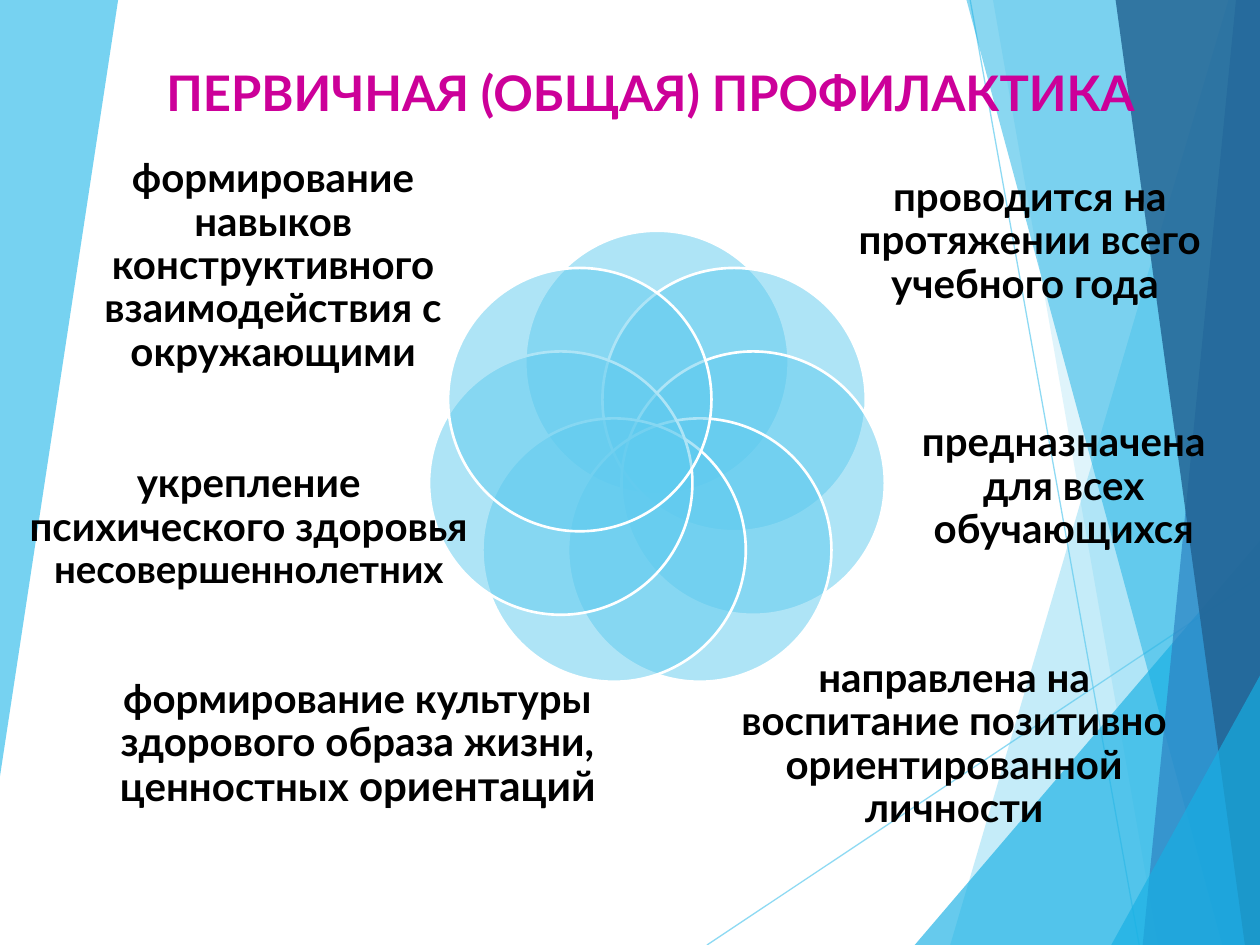
from math import cos, pi, sin

from lxml.etree import SubElement
from pptx import Presentation
from pptx.dml.color import RGBColor
from pptx.enum.shapes import MSO_CONNECTOR, MSO_SHAPE
from pptx.enum.text import MSO_ANCHOR, MSO_AUTO_SIZE, PP_ALIGN
from pptx.oxml.ns import qn
from pptx.util import Pt

THEME = {
    "font": "Lato", "title": "CC0099", "text": "000000", "outline": "FFFFFF",
    "sky": "5FCBEF", "azure": "17B0E4", "blue": "2E83C3", "navy": "226292",
    "title_size": 28, "size": 23, "large": 24, "small": 22,
}

W, H = 720, 540
RAYS = [((404, H), (W, 329.5)), ((554.4, 0), (651, H))]
# Colour, opacity in percent, corners
PANELS = [
    ("sky", 36, [(702, 0), (543, H), (W, H), (W, 0)]),
    ("sky", 20, [(567.4, 0), (661.7, H), (W, H), (W, 0)]),
    ("azure", 66, [(522.7, H), (W, 309), (W, H)]),
    ("azure", 50, [(552.3, 0), (698.4, H), (W, H), (W, 0)]),
    ("blue", 70, [(706.3, 0), (653, H), (W, H), (W, 0)]),
    ("navy", 82, [(637.5, 0), (711.4, H), (W, H), (W, 0)]),
    ("azure", 66, [(635, H), (W, 386), (W, H)]),
    ("sky", 85, [(0, 0), (67.5, 0), (0, 443.5)]),
]

TITLE = ((55.4, 20.9, 639.4, 67.7),
         [("ПЕРВИЧНАЯ (ОБЩАЯ) ПРОФИЛАКТИКА ", "title_size")])
# Clockwise from the upper right: box, runs
LABELS = [
    ((483.1, 100.1, 211, 76.3),
     [("проводится на протяжении всего учебного года ", "size")]),
    ((522.7, 236.2, 170.6, 84.2),
     [("предназначена для всех обучающихся", "size")]),
    ((409.7, 375.8, 271.4, 99.4),
     [("направлена на воспитание позитивно ориентированной личности", "size")]),
    ((61.9, 382.3, 285.1, 86.4),
     [("формирование культуры здорового образа жизни, ценностных ", "size"),
      ("ориентаций", "large")]),
    ((10.8, 236.2, 262.8, 130.3),
     [("укрепление психического здоровья ", "size"),
      ("несовершеннолетних", "small")]),
    ((55.4, 88.6, 201.6, 127.4),
     [("формирование навыков конструктивного взаимодействия с окружающими",
       "size")]),
]
PETALS, CENTRE, ORBIT, DIAMETER = 7, (375.4, 263.5), 56.4, 150.5


def color(name):
    return RGBColor.from_string(THEME[name])


def set_opacity(fill_owner, percent):
    clr = next(fill_owner.iter(qn("a:srgbClr")))
    SubElement(clr, qn("a:alpha"), val=str(percent * 1000))


def paint(sp, name, percent):
    sp.shadow.inherit = False
    sp.fill.solid()
    sp.fill.fore_color.rgb = color(name)
    set_opacity(sp._element.spPr, percent)


def add_ray(shapes, start, end):
    ray = shapes.add_connector(MSO_CONNECTOR.STRAIGHT, *map(Pt, start + end))
    ray.line.color.rgb = color("sky")
    ray.line.width = Pt(0.75)
    set_opacity(ray._element.spPr, 70)
    SubElement(ray._element.spPr, qn("a:effectLst"))


def add_panel(shapes, name, percent, corners):
    first, *rest = [(Pt(x), Pt(y)) for x, y in corners]
    builder = shapes.build_freeform(*first)
    builder.add_line_segments(rest, close=True)
    panel = builder.convert_to_shape()
    paint(panel, name, percent)
    panel.line.fill.background()


def add_petal(shapes, index):
    angle = 2 * pi * index / PETALS
    x = CENTRE[0] + ORBIT * sin(angle) - DIAMETER / 2
    y = CENTRE[1] - ORBIT * cos(angle) - DIAMETER / 2
    petal = shapes.add_shape(MSO_SHAPE.OVAL, Pt(x), Pt(y), Pt(DIAMETER), Pt(DIAMETER))
    paint(petal, "sky", 50)
    petal.line.color.rgb = color("outline")
    petal.line.width = Pt(1.5)


def write(sp, runs, ink):
    tf = sp.text_frame
    tf.word_wrap = True
    tf.auto_size = MSO_AUTO_SIZE.NONE
    tf.vertical_anchor = MSO_ANCHOR.MIDDLE
    tf.margin_left = tf.margin_top = tf.margin_right = tf.margin_bottom = 0
    p = tf.paragraphs[0]
    p.alignment = PP_ALIGN.CENTER
    p.line_spacing = 0.9
    for text, size in runs:
        r = p.add_run()
        r.text = text
        r.font.name = THEME["font"]
        r.font.size = Pt(THEME[size])
        r.font.bold = True
        r.font.color.rgb = color(ink)


def main():
    prs = Presentation()
    prs.slide_width, prs.slide_height = Pt(W), Pt(H)
    slide = prs.slides.add_slide(prs.slide_layouts[5])
    shapes = slide.shapes

    for start, end in RAYS:
        add_ray(shapes, start, end)
    for panel in PANELS:
        add_panel(shapes, *panel)
    for index in range(PETALS):
        add_petal(shapes, index)

    box, runs = TITLE
    title = shapes.title
    title.left, title.top, title.width, title.height = map(Pt, box)
    write(title, runs, "title")
    shapes._spTree.append(title._element)  # bring in front of the panels

    for box, runs in LABELS:
        write(shapes.add_textbox(*map(Pt, box)), runs, "text")
    prs.save("out.pptx")


if __name__ == "__main__":
    main()
